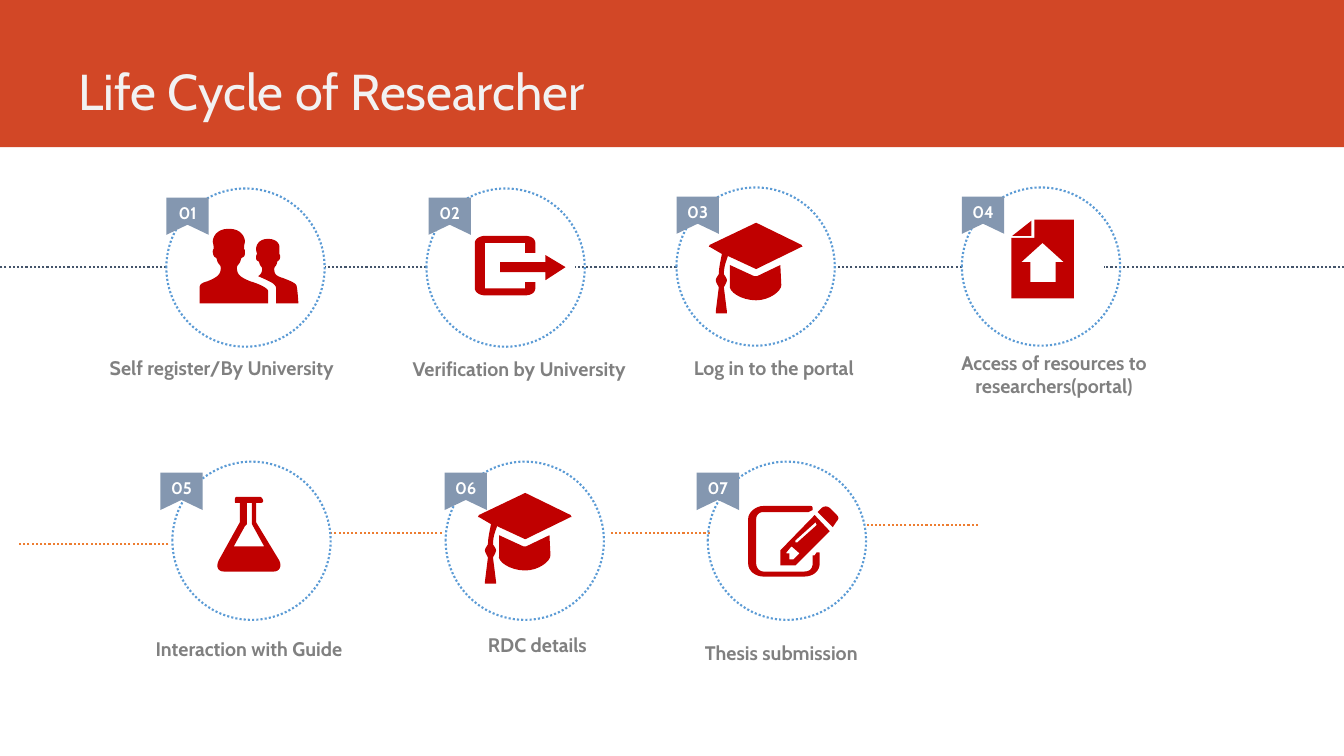
"""Build the slide on the seven steps in the life cycle of a researcher."""
import pptx
import pptx.dml.color
import pptx.enum.dml
import pptx.enum.shapes
import pptx.enum.text
import pptx.oxml
import pptx.oxml.ns
import pptx.util

PX = 9144
FINE = 100
CURVE_STEPS = 8
CIRCLE = 157
FONT = "Cabin"
COLORS = {
    "band": "D24726", "title": "F2F2F2", "circle": "5B9BD5", "top_row": "44546A",
    "bottom_row": "ED7D31", "ribbon": "8497B0", "number": "FFFFFF",
    "label": "808080", "icon": "C00000",
}
RGB = {name: pptx.dml.color.RGBColor.from_string(value) for name, value in COLORS.items()}

RIBBON = "M 21 27 L 42 37 42 0 0 0 0 37"
PEOPLE = (
    "M 50 52 C 40 48 37 45 37 39 37 35 40 36 41 30 42 27 45 30 45 23 45 20 44 20 44 20 "
    "44 20 44 16 45 13 45 9 42 0 29 0 16 0 13 9 13 13 14 16 14 20 14 20 14 20 13 20 13 23 "
    "14 30 16 27 17 30 18 36 21 35 21 39 21 45 18 48 8 52 5 53 0 54 0 58 "
    "L 0 74 68 74 68 62 C 68 59 60 55 50 52 "
    "M 98 74 C 98 74 97 58 96 56 95 54 91 52 83 49 76 47 74 45 74 40 74 37 76 38 77 33 "
    "77 31 79 33 80 28 80 26 79 25 79 25 79 25 79 22 79 20 80 17 78 10 68 10 "
    "58 10 56 17 56 20 56 22 57 25 57 25 57 25 56 26 56 28 56 33 58 31 59 33 "
    "60 38 62 37 62 40 62 43 61 45 58 47 74 54 76 55 76 61 L 76 74"
)
EXIT = (
    "M 90 31 L 70 19 70 26 25 26 25 36 70 36 70 44 "
    "M 50 52 L 10 52 10 7 50 7 50 17 60 17 60 7 C 60 3 56 0 50 0 L 10 0 C 5 0 0 3 0 7 "
    "L 0 52 C 0 56 5 59 10 59 L 50 59 C 56 59 60 56 60 52 L 60 46 50 46"
)
CAP = (
    "M 92 24 L 47 46 19 33 C 18 37 15 42 15 51 16 53 18 55 18 57 18 59 16 62 15 64 "
    "L 18 88 18 90 7 90 7 88 10 64 C 9 62 7 59 7 57 7 55 9 53 10 51 10 44 12 37 13 31 "
    "L 1 24 0 24 1 22 47 0 92 22 93 24 "
    "M 72 62 C 72 68 60 77 47 77 32 77 19 68 21 62 L 21 42 45 53 48 53 71 42"
)
UPLOAD = (
    "M 0 78 L 62 78 62 0 23 0 23 18 0 18 "
    "M 31 23 L 52 42 44 42 44 62 19 62 19 42 10 42 M 20 16 L 20 1 1 16"
)
FLASK = (
    "M 58 74 L 8 74 C 2 74 0 69 3 63 L 24 25 24 6 21 6 C 19 6 19 6 19 4 19 2 19 0 21 0 "
    "L 44 0 C 45 0 47 2 47 4 47 6 45 6 44 6 L 40 6 40 25 63 63 C 66 69 63 74 58 74 "
    "M 18 49 L 48 49 37 29 36 27 36 6 31 6 31 27 29 29"
)
EDIT = (
    "M 71 57 C 71 65 64 70 56 70 L 15 70 C 8 70 0 65 0 57 L 0 13 C 0 6 8 0 15 0 "
    "L 62 0 C 64 0 64 2 64 2 L 64 4 60 6 15 6 C 11 6 8 9 8 13 L 8 57 C 8 61 11 65 15 65 "
    "L 56 65 C 62 65 64 61 64 57 L 64 49 66 49 68 46 69 46 C 71 46 71 46 71 47 "
    "M 81 25 L 47 59 32 59 32 44 66 9 M 51 47 L 43 40 38 46 38 47 41 47 41 53 45 53 "
    "M 66 17 L 47 34 47 36 49 36 68 19 67 16 "
    "M 84 21 L 69 6 73 2 C 75 0 79 0 81 2 L 88 9 C 90 11 90 13 88 15"
)

# fmt: off
STEPS = [
    ((165, 187), (165, 196), PEOPLE, (198, 227), "Self register/By University", (46, 348, 348, 34)),
    ((423, 187), (425, 196), EXIT, (471, 234), "Verification by University", (382, 349, 266, 34)),
    ((671, 186), (671, 195), CAP, (703, 221), "Log in to the portal", (654, 348, 227, 34)),
    ((954, 186), (954, 195), UPLOAD, (1003, 218), "Access of resources to researchers(portal)",
     (932, 343, 227, 81)),
    ((171, 458), (159, 469), FLASK, (214, 493), "Interaction with Guide", (138, 627, 218, 57)),
    ((442, 458), (441, 469), CAP, (474, 489), "RDC details", (407, 623, 252, 34)),
    ((702, 458), (691, 469), EDIT, (742, 502), "Thesis submission", (667, 631, 216, 34)),
]
LINES = [
    ("top_row", 265, [(165, 0), (423, 322), (671, 570), (954, 828), (1333, 1095)]),
    ("bottom_row", 540, [(167, 17)]),
    ("bottom_row", 529, [(438, 328), (704, 604)]),
    ("bottom_row", 521, [(970, 860)]),
]


def draw_outline(path, x, y, color):
    """Draw a filled outline from move, line and curve commands."""
    contours, command, numbers = [], "", []
    for word in path.split():
        if word.isalpha():
            command = word
            continue
        numbers.append(int(word) * FINE)
        if len(numbers) < (6 if command == "C" else 2):
            continue
        if command == "M":
            contours.append([tuple(numbers)])
        elif command == "L":
            contours[-1].append(tuple(numbers))
        else:
            ends = [contours[-1][-1], *zip(numbers[::2], numbers[1::2])]
            for i in range(1, CURVE_STEPS + 1):
                t = i / CURVE_STEPS
                weights = ((1 - t) ** 3, 3 * t * (1 - t) ** 2, 3 * t * t * (1 - t), t ** 3)
                contours[-1].append(tuple(
                    sum(w * end[axis] for w, end in zip(weights, ends)) for axis in (0, 1)))
        numbers = []
    builder = shapes.build_freeform(*contours[0][0], scale=PX / FINE)
    builder.add_line_segments(contours[0][1:])
    for contour in contours[1:]:
        builder.move_to(*contour[0])
        builder.add_line_segments(contour[1:])
    sp = builder.convert_to_shape(x * PX, y * PX)
    sp.shadow.inherit = False
    sp.fill.solid()
    sp.fill.fore_color.rgb = RGB[color]
    sp.line.fill.background()
    return sp


def write_text(sp, text, size, color, bold=True, centred=True):
    """Put one run of text at the top of a shape."""
    tf = sp.text_frame
    tf.word_wrap = True
    tf.vertical_anchor = pptx.enum.text.MSO_ANCHOR.TOP
    p = tf.paragraphs[0]
    align = pptx.enum.text.PP_ALIGN
    p.alignment = align.CENTER if centred else align.LEFT
    r = p.add_run()
    r.text = text
    r.font.name = FONT
    r.font.size = pptx.util.Pt(size)
    r.font.bold = bold
    r.font.color.rgb = RGB[color]


prs = pptx.Presentation()
prs.slide_width = 1333 * PX
prs.slide_height = 750 * PX
shapes = prs.slides.add_slide(prs.slide_layouts[6]).shapes
preset = pptx.enum.shapes.MSO_SHAPE
dots = pptx.enum.dml.MSO_LINE.ROUND_DOT

band = shapes.add_shape(preset.RECTANGLE, 0, 0, prs.slide_width, 146 * PX)
band.shadow.inherit = False
band.fill.solid()
band.fill.fore_color.rgb = RGB["band"]
band.line.fill.background()
title = shapes.add_textbox(68 * PX, 55 * PX, 555 * PX, 69 * PX)
write_text(title, "Life Cycle of Researcher", 36, "title", bold=False, centred=False)

for color, y, spans in LINES:
    for start, end in spans:
        line = shapes.add_connector(
            pptx.enum.shapes.MSO_CONNECTOR.STRAIGHT, start * PX, y * PX, end * PX, y * PX)
        line.line.color.rgb = RGB[color]
        line.line.width = pptx.util.Pt(1.5)
        line.line.dash_style = dots
        line._element.spPr.append(pptx.oxml.parse_xml(
            f"<a:effectLst {pptx.oxml.ns.nsdecls('a')}/>"))

for number, (circle_at, ribbon_at, icon, icon_at, label, label_box) in enumerate(STEPS, 1):
    circle = shapes.add_shape(
        preset.OVAL, *(v * PX for v in (*circle_at, CIRCLE, CIRCLE)))
    circle.shadow.inherit = False
    circle.fill.background()
    circle.line.color.rgb = RGB["circle"]
    circle.line.width = pptx.util.Pt(1.5)
    circle.line.dash_style = dots
    ribbon = draw_outline(RIBBON, *ribbon_at, "ribbon")
    write_text(ribbon, f"{number:02}", 12, "number")
    draw_outline(icon, *icon_at, "icon")
    write_text(shapes.add_textbox(*(v * PX for v in label_box)), label, 14, "label")

prs.save("out.pptx")
